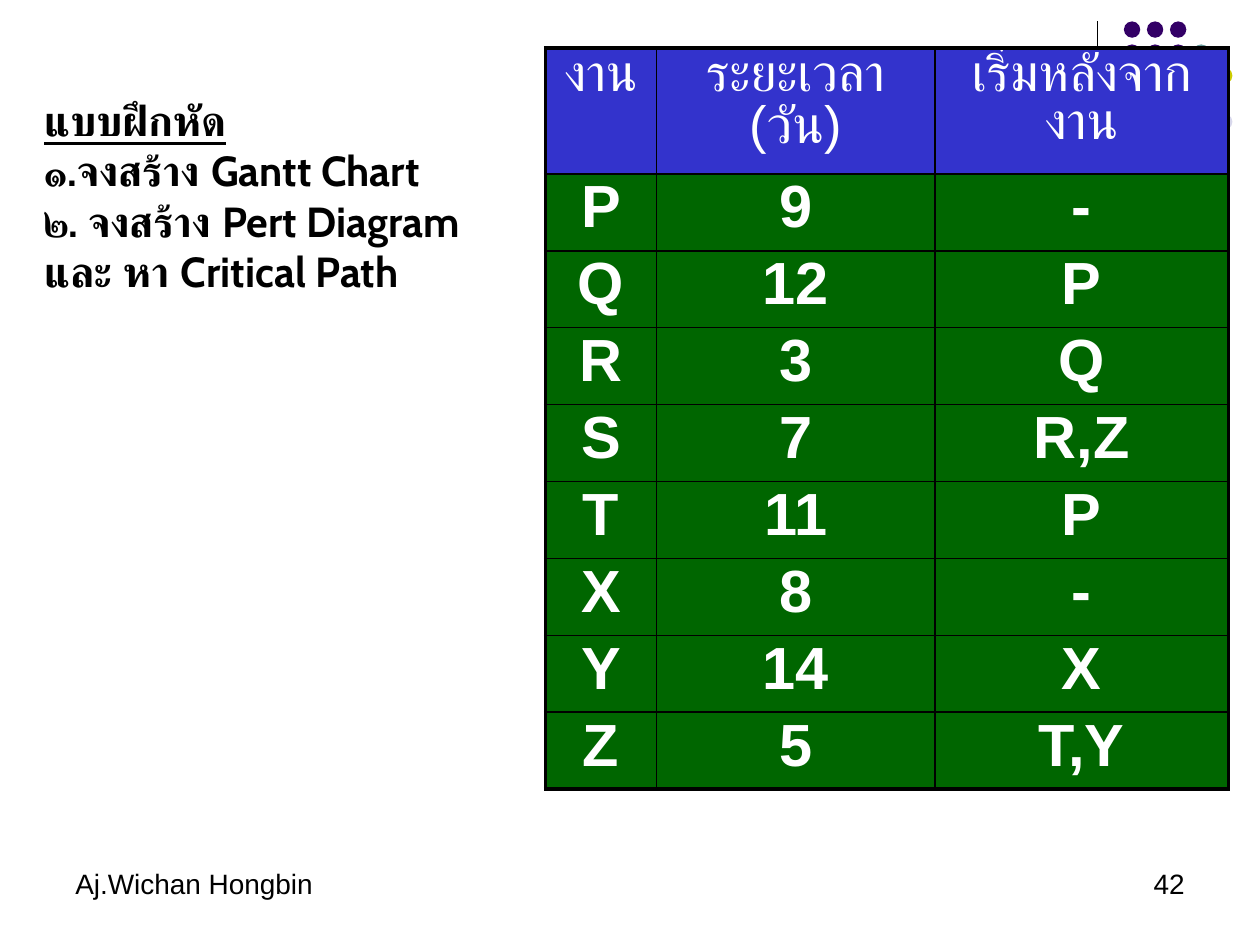
"""Build the exercise slide with its task table and dotted corner ornament."""
import lxml.etree
import pptx
import pptx.dml.color
import pptx.enum.shapes
import pptx.enum.text
import pptx.oxml.ns
import pptx.util

WIDTH, HEIGHT = 10, 7.5
EXERCISE = [
    "แบบฝึกหัด",
    "๑.จงสร้าง Gantt Chart",
    "๒. จงสร้าง Pert Diagram และ หา Critical Path",
]
TASKS = [
    ("งาน", "ระยะเวลา (วัน)", "เริ่มหลังจากงาน"),
    ("P", "9", "-"),
    ("Q", "12", "P"),
    ("R", "3", "Q"),
    ("S", "7", "R,Z"),
    ("T", "11", "P"),
    ("X", "8", "-"),
    ("Y", "14", "X"),
    ("Z", "5", "T,Y"),
]
COLUMN_WIDTHS = (0.88, 2.21, 2.33)
HEADER_HEIGHT, ROW_HEIGHT = 0.89, 0.57
FOOTERS = [("Aj.Wichan Hongbin", 0.5, "LEFT"), ("42", 7.17, "RIGHT")]
DOT_ROWS = ["PPP", "PPPT", "PPTTY", "PTTY", "TTYYL", "TYYL", "YYLL", " L L"]
DOT_COLORS = {"P": "330066", "T": "669999", "Y": "CCCC00", "L": "D8D8EC"}
DOT_LEFT, DOT_TOP, DOT_SIZE, DOT_PITCH = 8.92, 0.17, 0.13, 1.28 / 7
ALIGN = pptx.enum.text.PP_ALIGN


def rgb(color):
    """Turn a hex string into a colour."""
    return pptx.dml.color.RGBColor.from_string(color)


def inches(*lengths):
    """Turn numbers into lengths."""
    return [pptx.util.Inches(length) for length in lengths]


def style(para, size, font="Arial", color="000000", bold=False, align=ALIGN.LEFT):
    """Format a whole paragraph."""
    para.alignment = align
    para.font.size = pptx.util.Pt(size)
    para.font.name = font
    para.font.bold = bold
    para.font.color.rgb = rgb(color)


def draw_ornament(page):
    """Draw the vertical rule and the grid of dots."""
    rule = page.shapes.add_connector(
        pptx.enum.shapes.MSO_CONNECTOR.STRAIGHT, *inches(8.71, 0.17, 8.71, 1.83))
    rule.line.color.rgb = rgb("000000")
    rule.line.width = pptx.util.Pt(0.75)
    lxml.etree.SubElement(rule.element.spPr, pptx.oxml.ns.qn("a:effectLst"))
    for row, keys in enumerate(DOT_ROWS):
        for column, key in enumerate(keys):
            if key in DOT_COLORS:
                dot = page.shapes.add_shape(
                    pptx.enum.shapes.MSO_SHAPE.OVAL,
                    *inches(DOT_LEFT + column * DOT_PITCH, DOT_TOP + row * DOT_PITCH,
                            DOT_SIZE, DOT_SIZE))
                dot.shadow.inherit = False
                dot.fill.solid()
                dot.fill.fore_color.rgb = rgb(DOT_COLORS[key])
                dot.line.fill.background()


def set_borders(cell, outer_edges):
    """Give a cell black borders, thicker on the table's outer edges."""
    properties = cell._tc.get_or_add_tcPr()
    for index, (side, outer) in enumerate(zip("LRTB", outer_edges)):
        line = lxml.etree.Element(
            pptx.oxml.ns.qn("a:ln" + side), w=str(pptx.util.Pt(2.25 if outer else 1)))
        fill = lxml.etree.SubElement(line, pptx.oxml.ns.qn("a:solidFill"))
        lxml.etree.SubElement(fill, pptx.oxml.ns.qn("a:srgbClr"), val="000000")
        properties.insert(index, line)


def draw_tasks(page):
    """Draw the table of tasks."""
    heights = [HEADER_HEIGHT] + [ROW_HEIGHT] * (len(TASKS) - 1)
    table = page.shapes.add_table(
        len(TASKS), len(COLUMN_WIDTHS),
        *inches(4.33, 0.38, sum(COLUMN_WIDTHS), sum(heights))).table
    table.first_row = table.horz_banding = False
    for column, width in zip(table.columns, COLUMN_WIDTHS):
        column.width = pptx.util.Inches(width)
    for row, values in enumerate(TASKS):
        table.rows[row].height = pptx.util.Inches(heights[row])
        for column, value in enumerate(values):
            cell = table.cell(row, column)
            cell.text = value
            cell.fill.solid()
            cell.fill.fore_color.rgb = rgb("006600" if row else "3333CC")
            para = cell.text_frame.paragraphs[0]
            para.line_spacing = 0.9
            style(para, 34 if row else 30, color="FFFFFF", bold=row > 0, align=ALIGN.CENTER)
            set_borders(cell, (column == 0, column == len(values) - 1,
                               row == 0, row == len(TASKS) - 1))


def write_exercise(page):
    """Write the exercise in the title placeholder."""
    title = page.shapes.title
    title.left, title.top, title.width, title.height = inches(0.25, 0.7, 3.88, 2.1)
    frame = title.text_frame
    frame.text = "\n".join(EXERCISE)
    frame.word_wrap = True
    frame.auto_size = pptx.enum.text.MSO_AUTO_SIZE.NONE
    frame.vertical_anchor = pptx.enum.text.MSO_ANCHOR.TOP
    for index, para in enumerate(frame.paragraphs):
        style(para, 24, font="Cabin", bold=True)
        para.space_before = pptx.util.Pt(0)
        para.font.underline = index == 0


def write_footers(page):
    """Write the author and the page number."""
    for text, left, align in FOOTERS:
        box = page.shapes.add_textbox(*inches(left, 6.83, 2.33, 0.5))
        box.text_frame.word_wrap = True
        box.text_frame.text = text
        style(box.text_frame.paragraphs[0], 16, align=ALIGN[align])


def main():
    """Build and save the deck."""
    deck = pptx.Presentation()
    deck.slide_width, deck.slide_height = inches(WIDTH, HEIGHT)
    page = deck.slides.add_slide(deck.slide_layouts.get_by_name("Title Only"))
    draw_ornament(page)
    write_footers(page)
    draw_tasks(page)
    write_exercise(page)
    deck.save("out.pptx")


if __name__ == "__main__":
    main()
